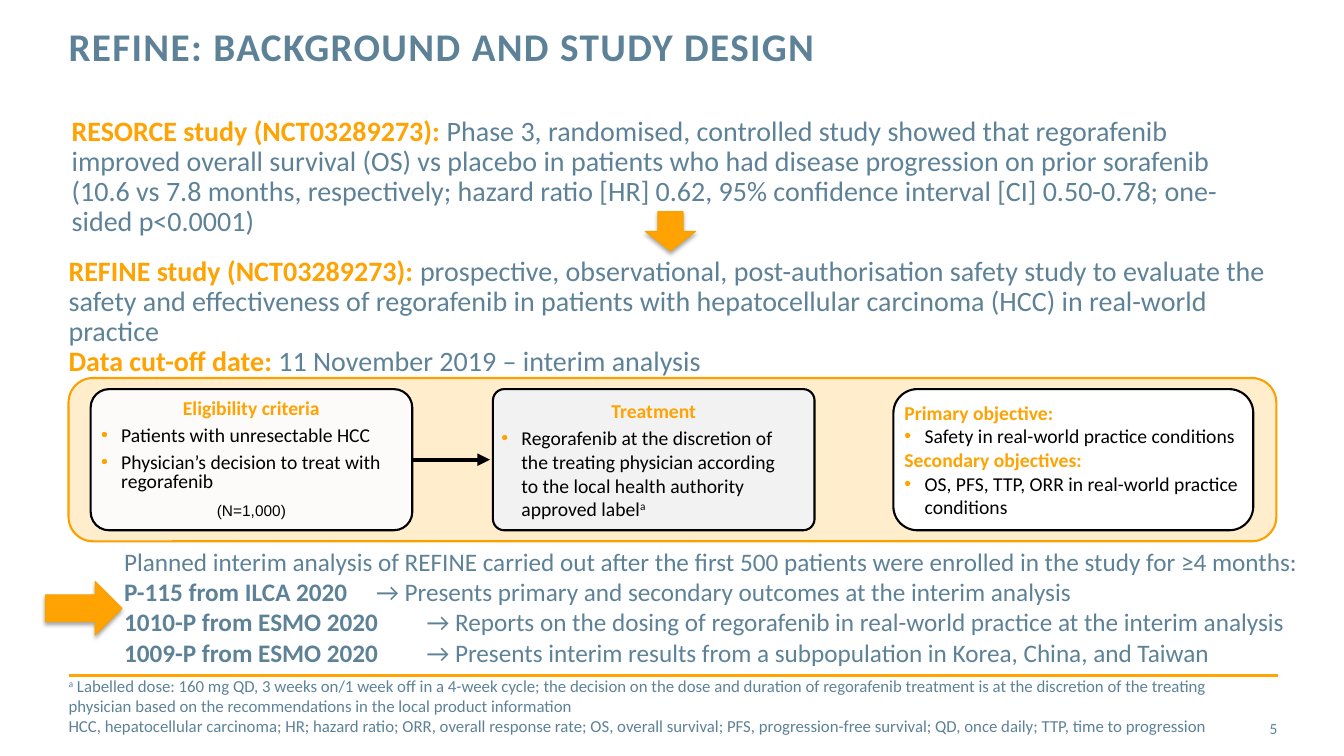
from copy import deepcopy
from dataclasses import dataclass

from lxml import etree
from pptx import Presentation
from pptx.dml.color import RGBColor
from pptx.enum.shapes import MSO_CONNECTOR, MSO_SHAPE
from pptx.enum.text import MSO_ANCHOR, MSO_AUTO_SIZE, PP_ALIGN
from pptx.oxml.ns import qn
from pptx.util import Emu, Inches, Pt

LEFT, CENTER, RIGHT = PP_ALIGN.LEFT, PP_ALIGN.CENTER, PP_ALIGN.RIGHT
TOP, MIDDLE, BOTTOM = MSO_ANCHOR.TOP, MSO_ANCHOR.MIDDLE, MSO_ANCHOR.BOTTOM
ROUNDED = MSO_SHAPE.ROUNDED_RECTANGLE
WIDTH, HEIGHT = Inches(13.33), Inches(7.5)
COLOURS = {
    "slate": "5D8298", "orange": "FEA302", "edge": "FAA000", "rule": "FFA402",
    "cream": "FFEDCC", "ivory": "FDFBFA", "grey": "F2F2F2", "white": "FFFFFF",
    "black": "000000",
}


@dataclass
class Place:
    """Shares of the slide's width and height, in percent."""
    left: float
    top: float
    width: float
    height: float


@dataclass
class Span:
    text: str
    colour: str = "slate"
    bold: bool = False
    raised: bool = False
    spacing: int = 0


@dataclass
class Para:
    spans: list[Span]
    size: float = 14
    align: PP_ALIGN = LEFT
    line: float | Pt | None = None
    before: float = 0
    after: float = 0
    bullet: bool = False
    tab: float = 0
    font: str = "Calibri"


@dataclass
class Card:
    left: float
    width: float
    fill: str
    corner: float
    inset: float
    paras: list[Para]


def across(share: float) -> Emu:
    return Emu(round(WIDTH * share / 100))


def down(share: float) -> Emu:
    return Emu(round(HEIGHT * share / 100))


def frame(place: Place) -> tuple[Emu, Emu, Emu, Emu]:
    return across(place.left), down(place.top), across(place.width), down(place.height)


def rgb(name: str) -> RGBColor:
    return RGBColor.from_string(COLOURS[name])


def add_element(parent, tag: str, **attributes: str):
    return etree.SubElement(parent, qn(tag), attributes)


def add_span(para, span: Span, style: Para) -> None:
    for number, piece in enumerate(span.text.split("\n")):
        if number:
            para.add_line_break()
            para._p[-1].append(deepcopy(run._r.rPr))
        run = para.add_run()
        run.text = piece
        run.font.name, run.font.size = style.font, Pt(style.size)
        run.font.bold = span.bold
        run.font.color.rgb = rgb(span.colour)
        if span.raised:
            run._r.rPr.set("baseline", "30000")
        if span.spacing:
            run._r.rPr.set("spc", str(span.spacing))


def add_para(para, style: Para) -> None:
    properties = para._p.get_or_add_pPr()
    indent = Inches(0.2) if style.bullet else 0
    properties.set("marL", str(indent))
    properties.set("indent", str(-indent))
    if style.bullet:
        colour = add_element(properties, "a:buClr")
        add_element(colour, "a:srgbClr", val=COLOURS["orange"])
        add_element(properties, "a:buFont", typeface="Arial")
        add_element(properties, "a:buChar", char="•")
    else:
        add_element(properties, "a:buNone")
    if style.tab:
        tabs = add_element(properties, "a:tabLst")
        add_element(tabs, "a:tab", pos=str(across(style.tab)), algn="l")
    para.alignment = style.align
    para.space_before, para.space_after = Pt(style.before), Pt(style.after)
    if style.line:
        para.line_spacing = style.line
    for span in style.spans:
        add_span(para, span, style)


def write(box, paras: list[Para], anchor: MSO_ANCHOR = TOP,
          insets: tuple[float, float, float, float] = (0, 0, 0, 0)) -> None:
    text = box.text_frame
    text.word_wrap, text.auto_size = True, MSO_AUTO_SIZE.NONE
    text.vertical_anchor = anchor
    (text.margin_left, text.margin_top,
     text.margin_right, text.margin_bottom) = map(Inches, insets)
    for number, style in enumerate(paras):
        add_para(text.add_paragraph() if number else text.paragraphs[0], style)


def fill_placeholder(box, place: Place, paras: list[Para], anchor: MSO_ANCHOR) -> None:
    box.left, box.top, box.width, box.height = frame(place)
    write(box, paras, anchor)


def add_text(page, place: Place, paras: list[Para]) -> None:
    write(page.shapes.add_textbox(*frame(place)), paras, TOP, (0, 0.05, 0.1, 0.05))


def add_shape(page, kind: MSO_SHAPE, place: Place, fill: str, edge: str, weight: float):
    shape = page.shapes.add_shape(kind, *frame(place))
    shape.fill.solid()
    shape.fill.fore_color.rgb = rgb(fill)
    shape.line.color.rgb, shape.line.width = rgb(edge), Pt(weight)
    shape.shadow.inherit = False
    return shape


def add_block_arrow(page, kind: MSO_SHAPE, place: Place) -> None:
    shape = add_shape(page, kind, place, "orange", "edge", 0.75)
    effects = shape._element.spPr.find(qn("a:effectLst"))
    shadow = add_element(effects, "a:outerShdw", blurRad=str(Pt(3.1)), dist=str(Pt(1.8)),
                         dir="5400000", rotWithShape="0")
    colour = add_element(shadow, "a:srgbClr", val=COLOURS["black"])
    add_element(colour, "a:alpha", val="35000")


def add_line(page, start: float, end: float, row: float, colour: str,
             weight: float, arrow: bool = False) -> None:
    line = page.shapes.add_connector(MSO_CONNECTOR.STRAIGHT, across(start), down(row),
                                     across(end), down(row))
    line.line.color.rgb, line.line.width = rgb(colour), Pt(weight)
    if arrow:
        add_element(line.line._get_or_add_ln(), "a:tailEnd", type="triangle")
    add_element(line._element.spPr, "a:effectLst")


def lead(heading: str, text: str) -> Para:
    return Para([Span(heading, "orange", True), Span(text)], 20, line=0.9)


def heading(text: str, **style) -> Para:
    return Para([Span(text, "orange", True)], **style)


def item(text: str, **style) -> Para:
    return Para([Span(text, "black")], bullet=True, **style)


# Wording of the text blocks
TITLE = Para([Span("REFINE: BACKGROUND AND STUDY DESIGN", bold=True, spacing=100)], 28, line=Pt(30))
RESORCE = [lead("RESORCE study (NCT03289273): ", "Phase 3, randomised, controlled study showed that regorafenib improved overall survival (OS) vs placebo in patients who had disease progression on prior sorafenib (10.6 vs 7.8 months, respectively; hazard ratio [HR] 0.62, 95% confidence interval [CI] 0.50-0.78; one-sided p<0.0001)")]
REFINE = [
    lead("REFINE study (NCT03289273): ", "prospective, observational, post-authorisation safety study to evaluate the safety and effectiveness of regorafenib in patients with hepatocellular carcinoma (HCC) in real-world practice"),
    lead("Data cut-off date: ", "11 November 2019 – interim analysis"),
]
REPORTS = {
    "P-115 from ILCA 2020": "Presents primary and secondary outcomes at the interim analysis",
    "1010-P from ESMO 2020": "Reports on the dosing of regorafenib in real-world practice at the interim analysis",
    "1009-P from ESMO 2020": "Presents interim results from a subpopulation in Korea, China, and Taiwan",
}
INTERIM = [Para([Span("Planned interim analysis of REFINE carried out after the first 500 patients were enrolled in the study for ≥4 months:")], 18)] + [
    Para([Span(source + "\t", bold=True), Span("→ " + finding)], 18, tab=20.18)
    for source, finding in REPORTS.items()]
FOOTNOTE = Para([Span("a", raised=True), Span(" Labelled dose: 160 mg QD, 3 weeks on/1 week off in a 4-week cycle; the decision on the dose and duration of regorafenib treatment is at the discretion of the treating physician based on the recommendations in the local product information \nHCC, hepatocellular carcinoma; HR; hazard ratio; ORR, overall response rate; OS, overall survival; PFS, progression-free survival; QD, once daily; TTP, time to progression")], 12)

# Cards of the study design
TIGHT = {"line": Pt(14), "before": 0.4, "after": 4.5}
CARDS = [
    Card(6.75, 23.93, "ivory", 0.13, 0.05, [
        heading("Eligibility criteria", align=CENTER, line=Pt(14), after=5),
        item("Patients with unresectable HCC", **TIGHT),
        item("Physician’s decision to treat with regorafenib", **TIGHT),
        Para([Span("(N=1,000)", "black")], 11, CENTER, font="Arial", **TIGHT)]),
    Card(36.68, 23.93, "grey", 0.08, 0.05, [
        heading("Treatment", align=CENTER),
        Para([Span("Regorafenib at the discretion of \nthe treating physician according \nto the local health authority \napproved label", "black"),
              Span("a", "black", raised=True)], before=2.8, after=4.5, bullet=True)]),
    Card(66.47, 26.78, "white", 0.17, 0.04, [
        heading("Primary objective:"),
        item("Safety in real-world practice conditions"),
        heading("Secondary objectives:"),
        item("OS, PFS, TTP, ORR in real-world practice conditions")]),
]


def main() -> None:
    deck = Presentation()
    deck.slide_width, deck.slide_height = WIDTH, HEIGHT
    page = deck.slides.add_slide(deck.slide_layouts[1])

    # Title, footnote, rule and page number
    fill_placeholder(page.shapes.title, Place(5.1, 3.6, 71.7, 11.73), [TITLE], TOP)
    fill_placeholder(page.placeholders[1], Place(5.1, 92, 86.87, 5.33), [FOOTNOTE], BOTTOM)
    add_line(page, 5.1, 95.12, 89.33, "rule", 2)
    number = page.shapes.add_textbox(*frame(Place(88.6, 93.73, 6.45, 5.33)))
    write(number, [Para([Span("5")], 11, RIGHT)], MIDDLE)

    # Study design panel
    add_text(page, Place(5.1, 33.33, 89.8, 17.47), REFINE)
    panel = add_shape(page, ROUNDED, Place(5.1, 50, 89.87, 21.6), "cream", "edge", 1.5)
    panel.adjustments[0] = 0.15
    add_line(page, 28.73, 36.46, 60.8, "black", 3, arrow=True)
    for card in CARDS:
        place = Place(card.left, 51.47, card.width, 18.67)
        box = add_shape(page, ROUNDED, place, card.fill, "black", 1.5)
        box.adjustments[0] = card.corner
        write(box, card.paras, MIDDLE, (card.inset, 0.05, card.inset, 0.05))

    # Interim analysis and background, with block arrows
    add_text(page, Place(9.23, 71.6, 89.8, 17.47), INTERIM)
    add_block_arrow(page, MSO_SHAPE.RIGHT_ARROW, Place(3.38, 76.93, 5.7, 7.07))
    add_text(page, Place(5.33, 14.8, 89.57, 17.47), RESORCE)
    add_block_arrow(page, MSO_SHAPE.DOWN_ARROW, Place(48.01, 28, 3.75, 5.2))

    deck.save("out.pptx")


if __name__ == "__main__":
    main()
